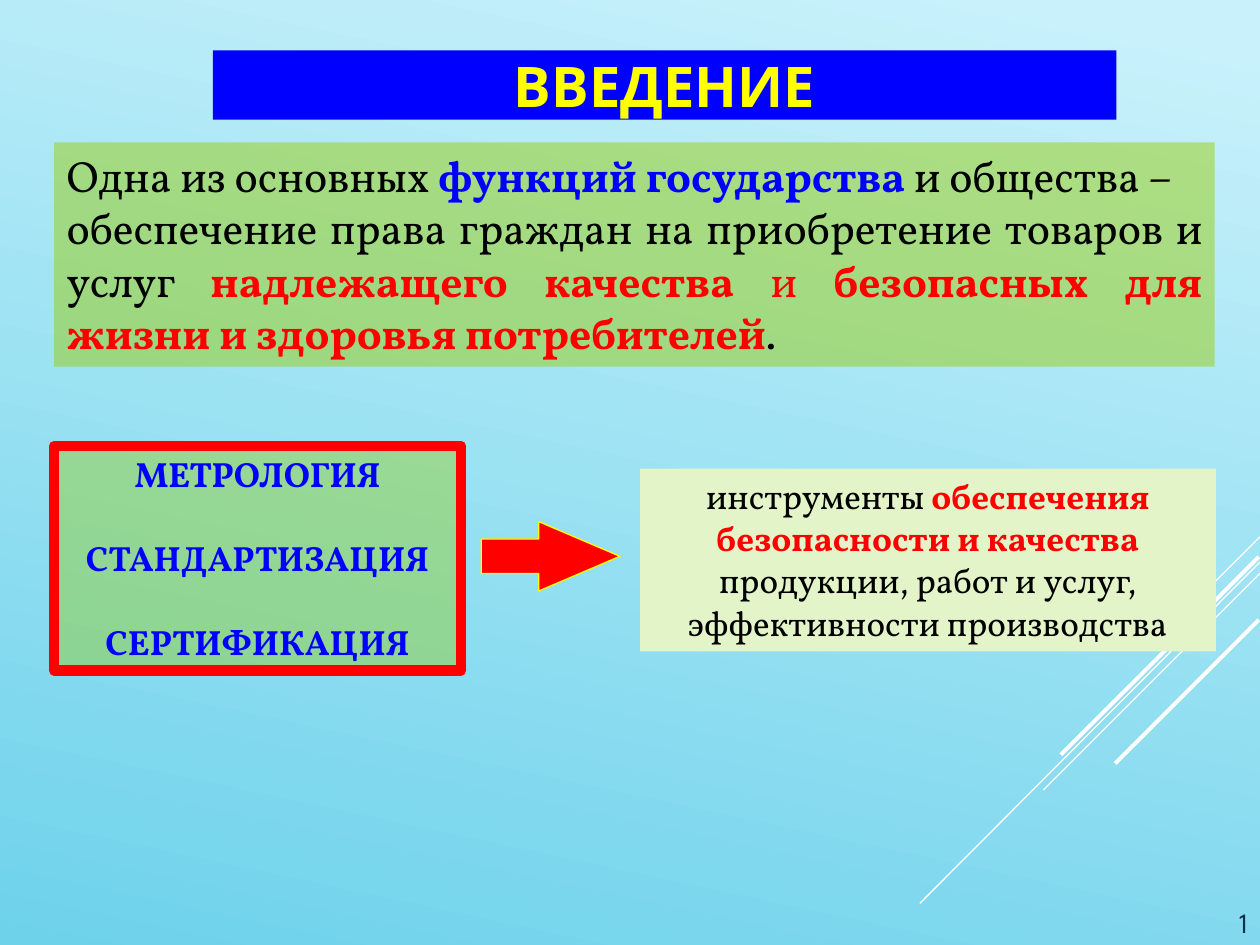
from dataclasses import dataclass
from lxml.etree import SubElement
from pptx import Presentation
from pptx.dml.color import RGBColor
from pptx.enum.shapes import MSO_CONNECTOR, MSO_SHAPE
from pptx.enum.text import MSO_ANCHOR, PP_ALIGN
from pptx.oxml.ns import qn
from pptx.util import Inches, Pt


@dataclass(frozen=True)
class Theme:
    heading_font: str = "League Spartan"
    body_font: str = "Vollkorn"
    title_size: int = 32
    intro_size: int = 25
    body_size: int = 20
    number_size: int = 16
    sky_light: str = "C8F1FB"
    sky_dark: str = "6ED2EB"
    white: str = "FFFFFF"
    black: str = "000000"
    blue: str = "0000FF"
    red: str = "FF0000"
    yellow: str = "FFFF00"
    green: str = "99CC00"
    pale_green: str = "E3F4C9"
    navy: str = "0A304A"


THEME = Theme()

TITLE = [(PP_ALIGN.CENTER, [("ВВЕДЕНИЕ", THEME.yellow, True)])]
INTRO = [
    (PP_ALIGN.LEFT, [
        ("Одна из основных ", THEME.black, False),
        ("функций государства ", THEME.blue, True),
        ("и общества –", THEME.black, False),
    ]),
    (PP_ALIGN.JUSTIFY, [
        ("обеспечение права граждан на приобретение товаров и услуг ", THEME.black, False),
        ("надлежащего качества ", THEME.red, True),
        ("и ", THEME.red, False),
        ("безопасных для жизни и здоровья потребителей", THEME.red, True),
        (".", THEME.black, False),
    ]),
]
DISCIPLINES = [
    (PP_ALIGN.CENTER, [(name, THEME.blue, True)])
    for name in ("МЕТРОЛОГИЯ", "СТАНДАРТИЗАЦИЯ", "СЕРТИФИКАЦИЯ")
]
TOOLS = [(PP_ALIGN.CENTER, [
    ("инструменты ", THEME.black, False),
    ("обеспечения безопасности и качества ", THEME.red, True),
    ("продукции, работ и услуг, эффективности производства", THEME.black, False),
])]
PAGE_NUMBER = [(PP_ALIGN.RIGHT, [("1", THEME.navy, False)])]

RAYS = [
    (10, 4.26, 9.17, 5.09, 0.75),
    (10, 4.46, 7.3, 7.17, 0.75),
    (10, 4.55, 8.28, 6.27, 0.75),
    (9.99, 4.42, 8.42, 5.99, 2.25),
    (9.99, 4.92, 8.85, 6.06, 2.25),
]


def rgb(color):
    return RGBColor.from_string(color)


def paint_background(page):
    fill = page.background.fill
    fill.gradient()
    fill.gradient_angle = 258
    stops = ((0.04, THEME.sky_light), (1, THEME.sky_dark))
    for stop, (position, color) in zip(fill.gradient_stops, stops):
        stop.position = position
        stop.color.rgb = rgb(color)


def add_ray(page, left, top, right, bottom, width):
    ray = page.shapes.add_connector(
        MSO_CONNECTOR.STRAIGHT, *map(Inches, (left, top, right, bottom)))
    ray.line.color.rgb = rgb(THEME.white)
    ray.line.width = Pt(width)
    SubElement(ray._element.spPr, qn("a:effectLst"))


def add_block(page, kind, place, fill, opacity=100, line=None, width=0):
    block = page.shapes.add_shape(kind, *map(Inches, place))
    block.shadow.inherit = False
    block.fill.solid()
    block.fill.fore_color.rgb = rgb(fill)
    if opacity < 100:
        color = block._element.spPr.find(qn("a:solidFill")).find(qn("a:srgbClr"))
        SubElement(color, qn("a:alpha"), val=str(opacity * 1000))
    if line:
        block.line.color.rgb = rgb(line)
        block.line.width = Pt(width)
    else:
        block.line.fill.background()
    return block


def write(box, paragraphs, font, size, anchor=MSO_ANCHOR.TOP, gap=0):
    frame = box.text_frame
    frame.word_wrap = True
    frame.vertical_anchor = anchor
    for index, (alignment, spans) in enumerate(paragraphs):
        para = frame.add_paragraph() if index else frame.paragraphs[0]
        para.alignment = alignment
        para.font.name = font
        para.font.size = Pt(size)
        para.space_before = Pt(gap if index else 0)
        for text, color, bold in spans:
            span = para.add_run()
            span.text = text
            span.font.name = font
            span.font.size = Pt(size)
            span.font.color.rgb = rgb(color)
            span.font.bold = bold


def main():
    deck = Presentation()
    deck.slide_width, deck.slide_height = Inches(10), Inches(7.5)
    page = deck.slides.add_slide(deck.slide_layouts[6])
    paint_background(page)
    for ray in RAYS:
        add_ray(page, *ray)

    title = add_block(page, MSO_SHAPE.RECTANGLE, (1.69, 0.4, 7.17, 0.55), THEME.blue)
    write(title, TITLE, THEME.heading_font, THEME.title_size, MSO_ANCHOR.MIDDLE)

    number = page.shapes.add_textbox(*map(Inches, (9.06, 6.77, 0.94, 0.73)))
    write(number, PAGE_NUMBER, THEME.heading_font, THEME.number_size, MSO_ANCHOR.BOTTOM)

    intro = add_block(page, MSO_SHAPE.RECTANGLE, (0.43, 1.13, 9.21, 1.78), THEME.green, 47)
    write(intro, INTRO, THEME.body_font, THEME.intro_size)

    disciplines = add_block(page, MSO_SHAPE.RECTANGLE, (0.43, 3.54, 3.23, 1.78),
                            THEME.green, 38, THEME.red, 6)
    write(disciplines, DISCIPLINES, THEME.body_font, THEME.body_size, gap=24)

    arrow = add_block(page, MSO_SHAPE.RIGHT_ARROW, (3.82, 4.14, 1.1, 0.55),
                      THEME.red, line=THEME.yellow, width=0.75)
    arrow.adjustments[0] = 0.5
    arrow.adjustments[1] = 1.17

    tools = add_block(page, MSO_SHAPE.RECTANGLE, (5.08, 3.72, 4.57, 1.45), THEME.pale_green)
    write(tools, TOOLS, THEME.body_font, THEME.body_size)

    deck.save("out.pptx")


if __name__ == "__main__":
    main()
